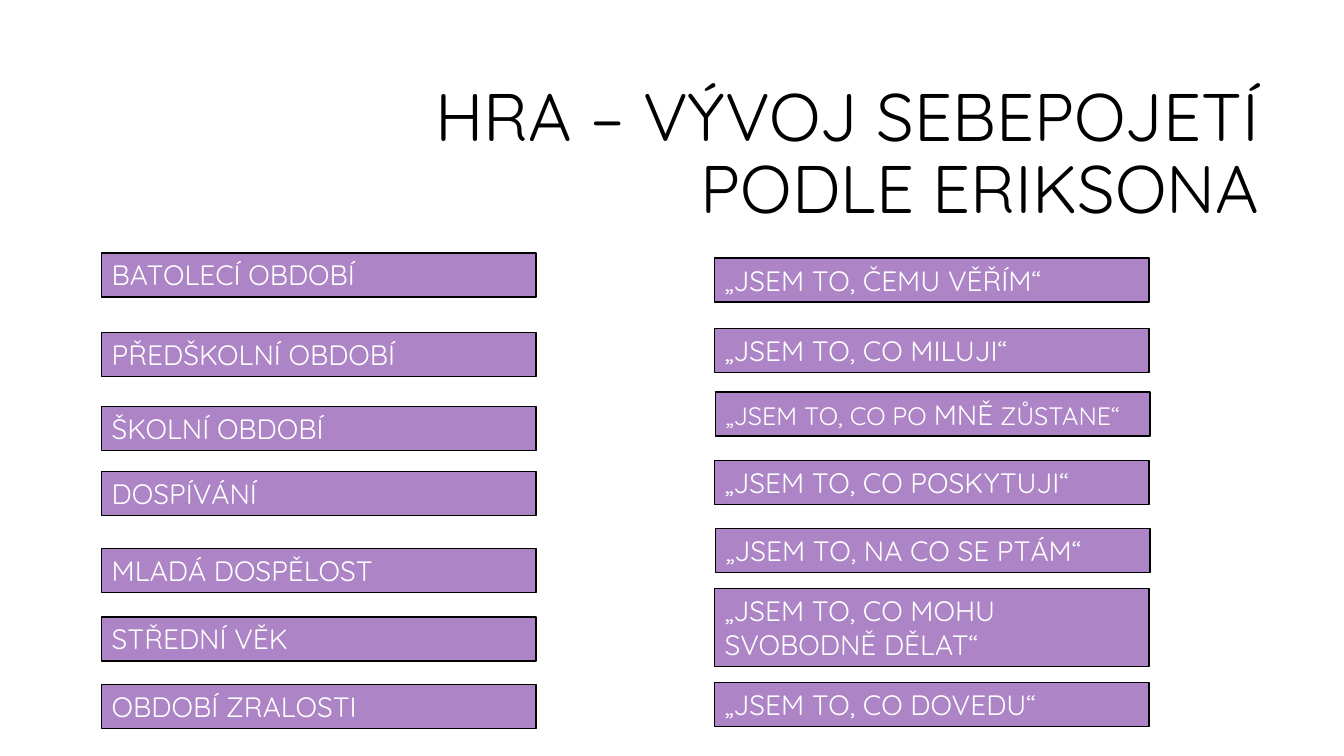
from dataclasses import dataclass

from pptx import Presentation
from pptx.dml.color import RGBColor
from pptx.enum.shapes import MSO_SHAPE
from pptx.enum.text import MSO_ANCHOR, MSO_AUTO_SIZE, PP_ALIGN
from pptx.slide import Slide
from pptx.text.text import Font
from pptx.util import Pt

COLORS = {"bar": "AD84C6", "line": "000000", "title": "000000", "label": "FFFFFF"}
FONT = "Quicksand"
BAR_WIDTH = 310.32
PERIOD_LEFT = 72.72
QUOTE_LEFT = 510.48
QUOTE_INDENTED = 511.2


@dataclass
class Bar:
    left: float
    top: float
    runs: list[tuple[str, int]]
    height: float = 31.5


PERIODS = [
    ("BATOLECÍ OBDOBÍ", 180.72),
    ("PŘEDŠKOLNÍ OBDOBÍ", 237.6),
    ("ŠKOLNÍ OBDOBÍ", 290.16),
    ("DOSPÍVÁNÍ", 336.96),
    ("MLADÁ DOSPĚLOST", 391.68),
    ("STŘEDNÍ VĚK", 440.64),
    ("OBDOBÍ ZRALOSTI", 488.88),
]

QUOTES = [
    Bar(QUOTE_LEFT, 184.32, [("„JSEM TO, ČEMU VĚŘÍM“", 20)]),
    Bar(QUOTE_LEFT, 234.72, [("„JSEM TO, CO MILUJI“", 20)]),
    Bar(QUOTE_INDENTED, 280.08,
        [("„JSEM TO, CO PO ", 18), ("MNĚ", 20), (" ZŮSTANE“", 18)]),
    Bar(QUOTE_LEFT, 329.04, [("„JSEM TO, CO POSKYTUJI“", 20)]),
    Bar(QUOTE_INDENTED, 377.28, [("„JSEM TO, NA CO SE PTÁM“", 20)]),
    Bar(QUOTE_LEFT, 420.48, [("„JSEM TO, CO MOHU SVOBODNĚ DĚLAT“", 20)], 55.44),
    Bar(QUOTE_LEFT, 487.44, [("„JSEM TO, CO DOVEDU“", 20)]),
]


def rgb(name: str) -> RGBColor:
    return RGBColor.from_string(COLORS[name])


def set_format(target: object, values: dict[str, object]) -> None:
    for name, value in values.items():
        setattr(target, name, value)


def format_font(font: Font, size: int, color: str) -> None:
    set_format(font, {"name": FONT, "size": Pt(size)})
    font.color.rgb = rgb(color)


def add_title(s: Slide, text: str) -> None:
    sp = s.shapes.title
    set_format(sp, {"left": Pt(228.24), "top": Pt(60.48),
                    "width": Pt(678.24), "height": Pt(101.52)})
    tf = sp.text_frame
    set_format(tf, {"text": text, "word_wrap": True,
                    "auto_size": MSO_AUTO_SIZE.NONE,
                    "vertical_anchor": MSO_ANCHOR.MIDDLE})
    p = tf.paragraphs[0]
    set_format(p, {"alignment": PP_ALIGN.RIGHT, "line_spacing": 0.9})
    format_font(p.runs[0].font, 48, "title")


def add_bar(s: Slide, bar: Bar) -> None:
    sp = s.shapes.add_shape(MSO_SHAPE.RECTANGLE, Pt(bar.left), Pt(bar.top),
                            Pt(BAR_WIDTH), Pt(bar.height))
    sp.shadow.inherit = False
    sp.fill.solid()
    sp.fill.fore_color.rgb = rgb("bar")
    sp.line.color.rgb = rgb("line")
    sp.line.width = Pt(1)
    tf = sp.text_frame
    set_format(tf, {"word_wrap": True, "vertical_anchor": MSO_ANCHOR.TOP,
                    "auto_size": MSO_AUTO_SIZE.SHAPE_TO_FIT_TEXT})
    p = tf.paragraphs[0]
    p.alignment = PP_ALIGN.LEFT
    for text, size in bar.runs:
        r = p.add_run()
        r.text = text
        format_font(r.font, size, "label")


def main() -> None:
    prs = Presentation()
    set_format(prs, {"slide_width": Pt(960), "slide_height": Pt(540)})
    s = prs.slides.add_slide(prs.slide_layouts.get_by_name("Title Only"))
    add_title(s, "HRA – VÝVOJ SEBEPOJETÍ PODLE ERIKSONA")
    periods = [Bar(PERIOD_LEFT, top, [(text, 20)]) for text, top in PERIODS]
    for bar in periods + QUOTES:
        add_bar(s, bar)
    prs.save("out.pptx")


if __name__ == "__main__":
    main()
